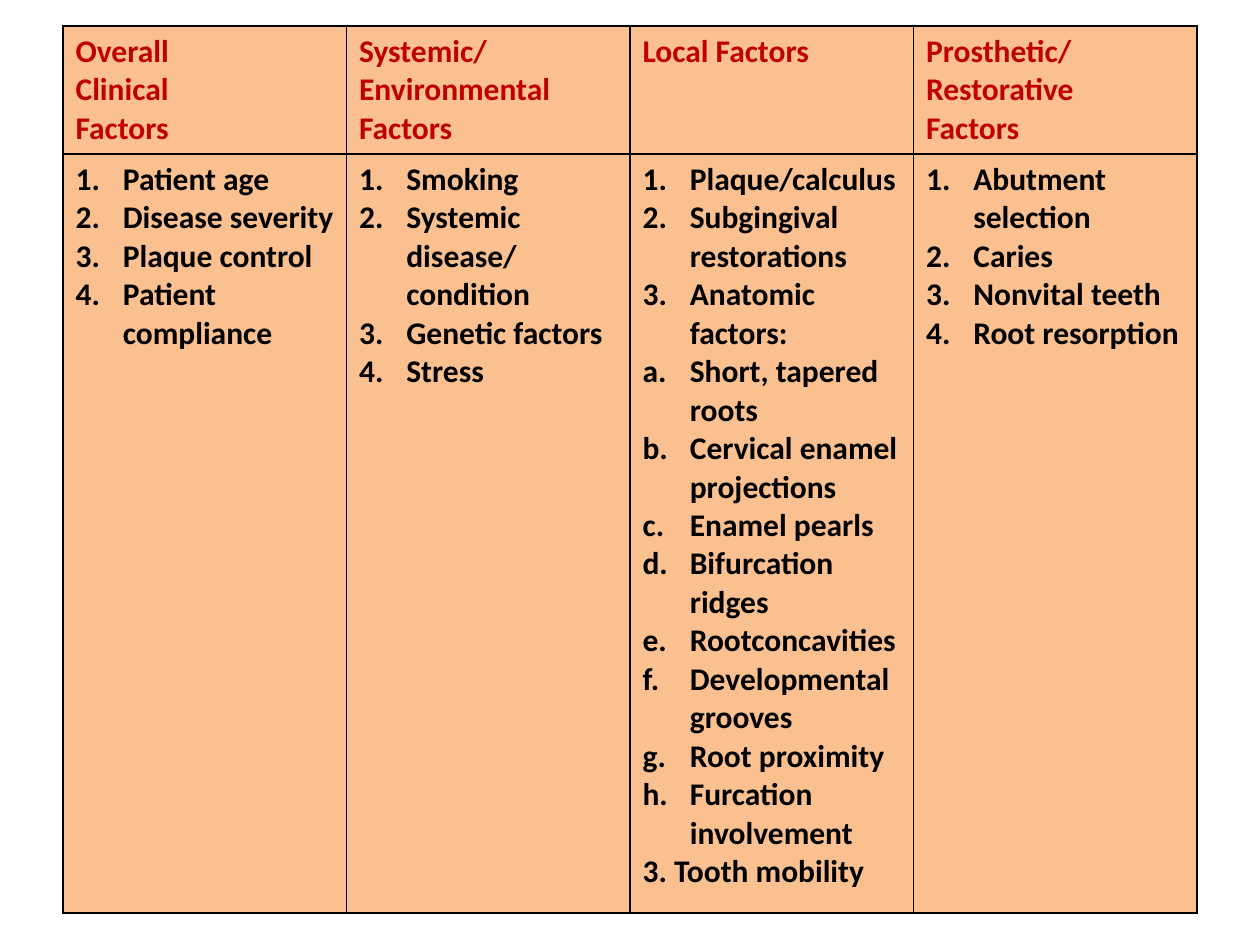
from lxml import etree
from pptx import Presentation
from pptx.dml.color import RGBColor
from pptx.oxml.ns import qn
from pptx.util import Pt

NUMBER, LETTER, PLAIN = "arabicPeriod", "alphaLcPeriod", None
COLUMNS = [
    (["Overall", "Clinical", "Factors"],
     [(NUMBER, ["Patient age", "Disease severity", "Plaque control",
                "Patient compliance"])]),
    (["Systemic/", "Environmental", "Factors"],
     [(NUMBER, ["Smoking", "Systemic disease/ condition", "Genetic factors",
                "Stress"])]),
    (["Local Factors"],
     [(NUMBER, ["Plaque/calculus", "Subgingival restorations",
                "Anatomic factors:"]),
      (LETTER, ["Short, tapered roots", "Cervical enamel projections",
                "Enamel pearls", "Bifurcation ridges", "Rootconcavities",
                "Developmental grooves", "Root proximity",
                "Furcation involvement"]),
      (PLAIN, ["3. Tooth mobility"])]),
    (["Prosthetic/", "Restorative", "Factors"],
     [(NUMBER, ["Abutment selection", "Caries", "Nonvital teeth",
                "Root resorption"])]),
]
LEFT, TOP, COL_W = 36, 15, 162
ROW_H = [71.5, 433.5]
INDENT = 27
FONT = {"name": "Calibri", "size": Pt(18), "bold": True}
FILL, HEAD, BODY, BORDER = "FAC090", "C00000", "000000", "000000"


def rgb(value):
    return RGBColor.from_string(value)


def style_cell(cell):
    tcPr = cell._tc.get_or_add_tcPr()
    for side in ("lnL", "lnR", "lnT", "lnB"):
        ln = etree.SubElement(tcPr, qn(f"a:{side}"), w=str(Pt(1)))
        fill = etree.SubElement(ln, qn("a:solidFill"))
        etree.SubElement(fill, qn("a:srgbClr"), val=BORDER)
    cell.fill.solid()
    cell.fill.fore_color.rgb = rgb(FILL)


def hang(p, scheme):
    pPr = p._p.get_or_add_pPr()
    pPr.set("marL", str(Pt(INDENT)))
    pPr.set("indent", str(-Pt(INDENT)))
    if scheme:
        etree.SubElement(pPr, qn("a:buFont"), typeface="+mj-lt")
        etree.SubElement(pPr, qn("a:buAutoNum"), type=scheme)
    else:
        etree.SubElement(pPr, qn("a:buNone"))


def write(cell, groups, color, hanging):
    tf = cell.text_frame
    items = [(scheme, line) for scheme, lines in groups for line in lines]
    for i, (scheme, line) in enumerate(items):
        p = tf.add_paragraph() if i else tf.paragraphs[0]
        if hanging:
            hang(p, scheme)
        r = p.add_run()
        r.text = line
        for key, value in FONT.items():
            setattr(r.font, key, value)
        r.font.color.rgb = rgb(color)


def main():
    prs = Presentation()
    prs.slide_width, prs.slide_height = Pt(720), Pt(540)
    s = prs.slides.add_slide(prs.slide_layouts[6])
    n = len(COLUMNS)
    table = s.shapes.add_table(len(ROW_H), n, Pt(LEFT), Pt(TOP),
                               Pt(COL_W * n), Pt(sum(ROW_H))).table
    table.horz_banding = False
    for row, height in zip(table.rows, ROW_H):
        row.height = Pt(height)
    for c, (heading, groups) in enumerate(COLUMNS):
        table.columns[c].width = Pt(COL_W)
        write(table.cell(0, c), [(PLAIN, heading)], HEAD, False)
        write(table.cell(1, c), groups, BODY, True)
    for cell in table.iter_cells():
        style_cell(cell)
    prs.save("out.pptx")


if __name__ == "__main__":
    main()
